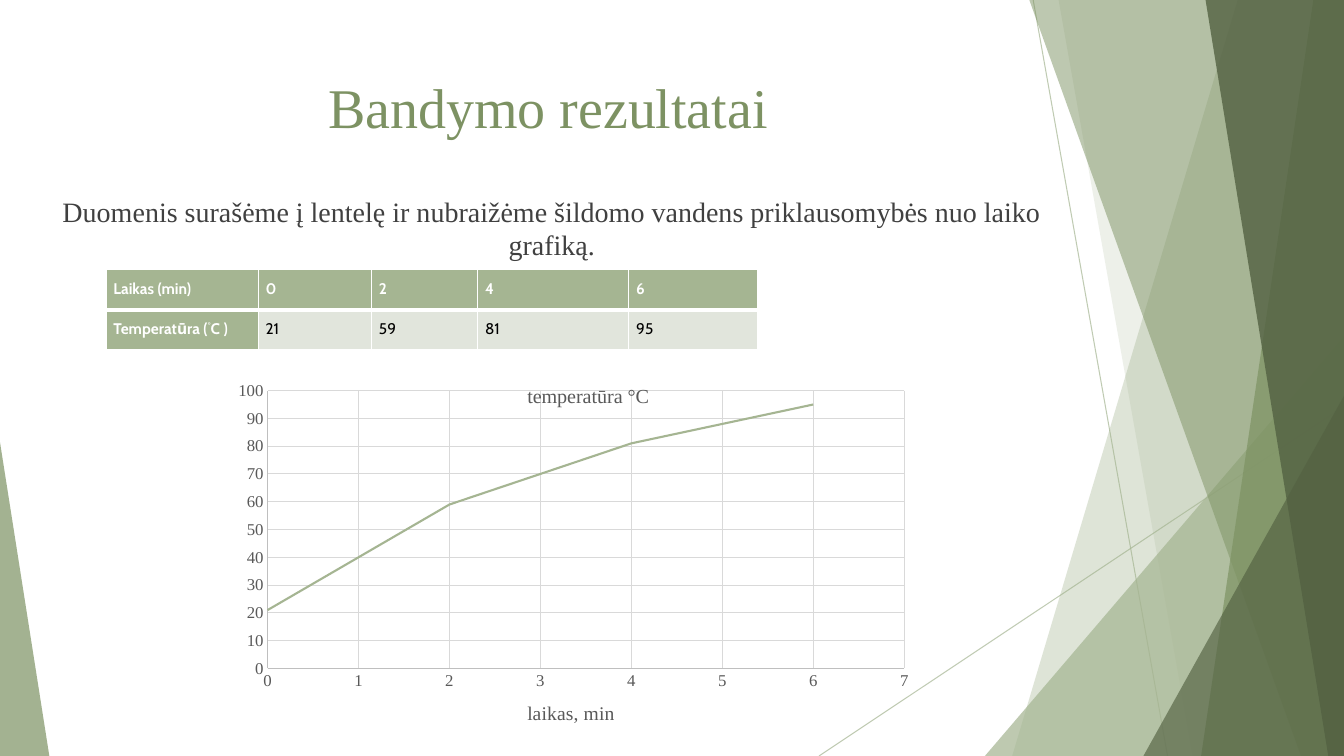
from dataclasses import dataclass
from typing import Any

import lxml.etree
import pptx
import pptx.chart.data
import pptx.dml.color
import pptx.enum.chart
import pptx.enum.shapes
import pptx.enum.text
import pptx.oxml.ns
import pptx.util

SCALE = 9525
WIDE, HIGH = 1280, 720
ALIGN = pptx.enum.text.PP_ALIGN
qn = pptx.oxml.ns.qn


@dataclass(frozen=True)
class Theme:
    sage: str = "A5B592"
    moss: str = "7D9263"
    pine: str = "536142"
    pale: str = "E1E5DC"
    white: str = "FFFFFF"
    black: str = "000000"
    text: str = "404040"
    label: str = "595959"
    axis: str = "BFBFBF"
    grid: str = "D9D9D9"
    serif: str = "Times New Roman"
    sans: str = "Cabin"
    head: float = 40
    body: float = 20
    cell: float = 11
    tick: float = 12
    name: float = 14
    top: float = 14.4


THEME = Theme()


@dataclass(frozen=True)
class Ray:
    left: int
    top: int
    right: int
    foot: int


@dataclass(frozen=True)
class Band:
    top: int
    foot: int
    tint: str
    alpha: int


@dataclass(frozen=True)
class Wedge:
    left: int
    top: int
    wide: int
    high: int
    apex: int
    tint: str
    alpha: int


DECOR = [
    Ray(984, 0, 1112, HIGH),
    Ray(WIDE, 387, 780, HIGH),
    Band(1179, 964, THEME.sage, 36),
    Band(1008, 1136, THEME.sage, 20),
    Wedge(938, 320, 342, 400, 1, THEME.sage, 72),
    Band(980, 1239, THEME.moss, 50),
    Band(1251, 1144, THEME.moss, 70),
    Band(1148, 1265, THEME.pine, 80),
    Wedge(1089, 377, 191, 343, 1, THEME.pine, 66),
    Wedge(0, 421, 47, 299, 0, THEME.moss, 70),
]
TIMES = [0, 2, 4, 6]
TEMPS = [21, 59, 81, 95]
WIDTHS = [145, 108, 101, 144, 123]
ROW = 38


def px(size: int) -> pptx.util.Emu:
    return pptx.util.Emu(size * SCALE)


def rgb(code: str) -> pptx.dml.color.RGBColor:
    return pptx.dml.color.RGBColor.from_string(code)


def sub(node: Any, tag: str, **attrs: str) -> Any:
    return lxml.etree.SubElement(node, qn(tag), attrs)


def style(font: Any, face: str, size: float, tint: str, bold: bool = False) -> None:
    font.name, font.size, font.bold = face, pptx.util.Pt(size), bold
    font.color.rgb = rgb(tint)


def fade(shape: Any, alpha: int) -> None:
    sub(shape.element.find(".//" + qn("a:srgbClr")), "a:alpha", val=str(alpha * 1000))


def paint(shape: Any, tint: str, alpha: int) -> None:
    shape.shadow.inherit = False
    shape.fill.solid()
    shape.fill.fore_color.rgb = rgb(tint)
    shape.line.fill.background()
    fade(shape, alpha)


def draw_ray(slide: Any, ray: Ray) -> None:
    line = slide.shapes.add_connector(
        pptx.enum.shapes.MSO_CONNECTOR.STRAIGHT,
        px(ray.left), px(ray.top), px(ray.right), px(ray.foot))
    line.line.color.rgb = rgb(THEME.sage)
    line.line.width = pptx.util.Pt(0.75)
    fade(line, 70)
    sub(line.element.spPr, "a:effectLst")


def draw_band(slide: Any, band: Band) -> None:
    pen = slide.shapes.build_freeform(band.top, -1, scale=SCALE)
    pen.add_line_segments([(WIDE, -1), (WIDE, HIGH), (band.foot, HIGH)], close=True)
    paint(pen.convert_to_shape(), band.tint, band.alpha)


def draw_wedge(slide: Any, wedge: Wedge) -> None:
    shape = slide.shapes.add_shape(
        pptx.enum.shapes.MSO_SHAPE.ISOSCELES_TRIANGLE,
        px(wedge.left), px(wedge.top), px(wedge.wide), px(wedge.high))
    shape.adjustments[0] = wedge.apex
    paint(shape, wedge.tint, wedge.alpha)


def fill_text(shape: Any, box: tuple[int, int, int, int], words: str,
              size: float, tint: str) -> None:
    shape.left, shape.top, shape.width, shape.height = map(px, box)
    shape.element.getparent().append(shape.element)
    frame = shape.text_frame
    frame.word_wrap = True
    frame.auto_size = pptx.enum.text.MSO_AUTO_SIZE.NONE
    frame.vertical_anchor = pptx.enum.text.MSO_ANCHOR.TOP
    para = frame.paragraphs[0]
    props = para._p.get_or_add_pPr()
    props.set("marL", "0")
    props.set("indent", "0")
    sub(props, "a:buNone")
    para.alignment = ALIGN.CENTER
    para.space_before = pptx.util.Pt(0)
    run = para.add_run()
    run.text = words
    style(run.font, THEME.serif, size, tint)


def fill_cell(cell: Any, parts: list[str], head: bool, first: bool) -> None:
    cell.margin_left = cell.margin_right = px(7)
    cell.margin_top = cell.margin_bottom = 0
    para = cell.text_frame.paragraphs[0]
    para.alignment, para.line_spacing = ALIGN.JUSTIFY, 1.5
    for part in parts:
        run = para.add_run()
        run.text = part
        style(run.font, THEME.sans, THEME.cell,
              THEME.white if head else THEME.black, head)
        if part == "°":
            run._r.get_or_add_rPr().set("baseline", "30000")
    props = cell._tc.get_or_add_tcPr()
    thick = "a:lnB" if first else "a:lnT"
    for tag in ("a:lnL", "a:lnR", "a:lnT", "a:lnB"):
        edge = sub(props, tag, w="38100" if tag == thick else "12700")
        sub(sub(edge, "a:solidFill"), "a:srgbClr", val=THEME.white)
    cell.fill.solid()
    cell.fill.fore_color.rgb = rgb(THEME.sage if head else THEME.pale)


def draw_table(slide: Any) -> None:
    rows = [[["Laikas (min)"]] + [[str(time)] for time in TIMES],
            [["Temperatūra (", "°", "C )"]] + [[str(temp)] for temp in TEMPS]]
    table = slide.shapes.add_table(len(rows), len(WIDTHS), px(101), px(257),
                                   px(sum(WIDTHS)), px(ROW * len(rows))).table
    for col, wide in zip(table.columns, WIDTHS):
        col.width = px(wide)
    for r, row in enumerate(rows):
        table.rows[r].height = px(ROW)
        for c, parts in enumerate(row):
            fill_cell(table.cell(r, c), parts, r == 0 or c == 0, r == 0)


def place(node: Any, index: int, **spots: Any) -> None:
    layout = node.find(qn("c:layout"))
    if layout is None:
        layout = lxml.etree.Element(qn("c:layout"))
        node.insert(index, layout)
    hand = sub(layout, "c:manualLayout")
    for tag, spot in spots.items():
        sub(hand, "c:" + tag, val=str(spot))


def name_part(title: Any, words: str, size: float, x: float, y: float) -> None:
    run = title.text_frame.paragraphs[0].add_run()
    run.text = words
    style(run.font, THEME.serif, size, THEME.label)
    place(title.element, 1, xMode="edge", yMode="edge", x=x, y=y)


def draw_chart(slide: Any) -> None:
    kinds = pptx.enum.chart
    data = pptx.chart.data.XyChartData()
    line = data.add_series("temperatūra °C")
    for time, temp in zip(TIMES, TEMPS):
        line.add_data_point(time, temp)
    chart = slide.shapes.add_chart(kinds.XL_CHART_TYPE.XY_SCATTER_LINES_NO_MARKERS,
                                   px(213), px(348), px(697), px(348), data).chart
    style(chart.font, THEME.serif, THEME.tick, THEME.black)
    chart.has_legend = False
    chart.has_title = True
    name_part(chart.chart_title, "temperatūra °C", THEME.top, 0.41, 0.04)
    for axis, top, step in ((chart.category_axis, 7, 1), (chart.value_axis, 100, 10)):
        axis.minimum_scale, axis.maximum_scale, axis.major_unit = 0, top, step
        axis.major_tick_mark = axis.minor_tick_mark = kinds.XL_TICK_MARK.NONE
        axis.has_major_gridlines = True
        style(axis.tick_labels.font, THEME.serif, THEME.tick, THEME.label)
        for part, tint in ((axis, THEME.axis), (axis.major_gridlines, THEME.grid)):
            part.format.line.color.rgb = rgb(tint)
            part.format.line.width = pptx.util.Pt(0.75)
    name_part(chart.category_axis.axis_title, "laikas, min", THEME.name, 0.41, 0.92)
    plot = chart.plots[0]
    plot.vary_by_categories = False
    curve = plot.series[0]
    curve.smooth = False
    curve.format.line.color.rgb = rgb(THEME.sage)
    curve.format.line.width = pptx.util.Pt(1.5)
    place(chart.element.find(".//" + qn("c:plotArea")), 0, layoutTarget="inner",
          xMode="edge", yMode="edge", x=0.06, y=0.07, w=0.87, h=0.77)


def main() -> None:
    deck = pptx.Presentation()
    deck.slide_width, deck.slide_height = px(WIDE), px(HIGH)
    slide = deck.slides.add_slide(deck.slide_layouts[1])
    tools = {Ray: draw_ray, Band: draw_band, Wedge: draw_wedge}
    for item in DECOR:
        tools[type(item)](slide, item)
    title, body = slide.shapes.title, slide.placeholders[1]
    fill_text(title, (71, 64, 902, 138), "Bandymo rezultatai", THEME.head, THEME.moss)
    fill_text(body, (48, 180, 955, 457),
              "Duomenis surašėme į lentelę ir nubraižėme šildomo vandens "
              "priklausomybės nuo laiko grafiką.", THEME.body, THEME.text)
    draw_table(slide)
    draw_chart(slide)
    deck.save("out.pptx")


if __name__ == "__main__":
    main()
